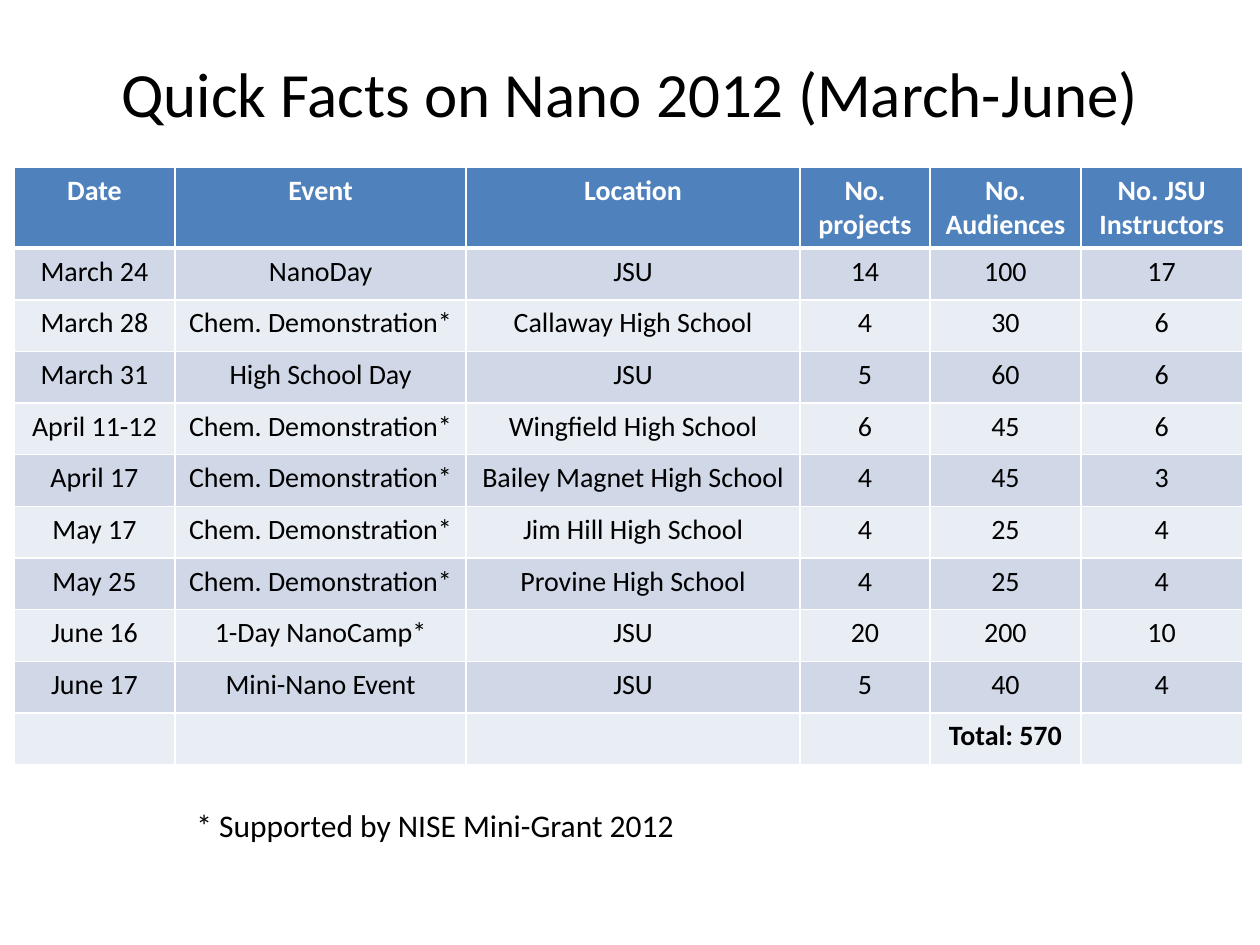
from lxml import etree
from pptx import Presentation
from pptx import util as u
from pptx.dml.color import RGBColor
from pptx.enum import text
from pptx.oxml.ns import qn

BLACK = RGBColor(0x00, 0x00, 0x00)
WHITE = RGBColor(0xFF, 0xFF, 0xFF)
HEADER_BLUE = RGBColor(0x4F, 0x81, 0xBD)
BAND_DARK = RGBColor(0xD0, 0xD8, 0xE8)
BAND_LIGHT = RGBColor(0xE9, 0xED, 0xF4)

COLUMN_WIDTHS = [1.28, 2.31, 2.65, 1.03, 1.2, 1.28]
HEADER_HEIGHT, ROW_HEIGHT = 0.64, 0.41
DEMO = "Chem. Demonstration*"
EVENTS = [
    ("Date", "Event", "Location", "No. projects", "No. Audiences", "No. JSU Instructors"),
    ("March 24", "NanoDay", "JSU", "14", "100", "17"),
    ("March 28", DEMO, "Callaway High School", "4", "30", "6"),
    ("March 31", "High School Day", "JSU", "5", "60", "6"),
    ("April 11-12", DEMO, "Wingfield High School", "6", "45", "6"),
    ("April 17", DEMO, "Bailey Magnet High School", "4", "45", "3"),
    ("May 17", DEMO, "Jim Hill High School", "4", "25", "4"),
    ("May 25", DEMO, "Provine High School", "4", "25", "4"),
    ("June 16", "1-Day NanoCamp*", "JSU", "20", "200", "10"),
    ("June 17", "Mini-Nano Event", "JSU", "5", "40", "4"),
    ("", "", "", "", "Total: 570", ""),
]


def style_paragraph(para, size, color=BLACK, bold=False, align=text.PP_ALIGN.CENTER):
    para.alignment = align
    para.font.name = "Calibri"
    para.font.size = u.Pt(size)
    para.font.bold = bold
    para.font.color.rgb = color


def add_text(page, words, left, top, width, height, size, align, wrap=True):
    box = page.shapes.add_textbox(*map(u.Inches, (left, top, width, height)))
    frame = box.text_frame
    frame.word_wrap = wrap
    frame.vertical_anchor = text.MSO_ANCHOR.MIDDLE
    frame.text = words
    style_paragraph(frame.paragraphs[0], size, align=align)


def set_borders(cell, top, bottom):
    """White cell borders, with widths in points."""
    properties = cell._tc.get_or_add_tcPr()
    for side, width in (("L", 1), ("R", 1), ("T", top), ("B", bottom)):
        line = etree.SubElement(properties, qn(f"a:ln{side}"), w=str(u.Pt(width)))
        fill = etree.SubElement(line, qn("a:solidFill"))
        etree.SubElement(fill, qn("a:srgbClr"), val=str(WHITE))


def add_events_table(page, left, top):
    height = HEADER_HEIGHT + ROW_HEIGHT * (len(EVENTS) - 1)
    table = page.shapes.add_table(
        len(EVENTS), len(COLUMN_WIDTHS), u.Inches(left), u.Inches(top),
        u.Inches(sum(COLUMN_WIDTHS)), u.Inches(height)).table
    for column, width in zip(table.columns, COLUMN_WIDTHS):
        column.width = u.Inches(width)

    for index, (row, values) in enumerate(zip(table.rows, EVENTS)):
        header = index == 0
        row.height = u.Inches(HEADER_HEIGHT if header else ROW_HEIGHT)
        band = BAND_DARK if index % 2 else BAND_LIGHT
        for cell, value in zip(row.cells, values):
            # A thick rule separates the header from the body
            set_borders(cell, top=3 if index == 1 else 1, bottom=3 if header else 1)
            cell.fill.solid()
            cell.fill.fore_color.rgb = HEADER_BLUE if header else band
            cell.text = value
            style_paragraph(cell.text_frame.paragraphs[0], 16,
                            WHITE if header else BLACK,
                            bold=header or value.startswith("Total"))


def main():
    deck = Presentation()
    deck.slide_width, deck.slide_height = u.Inches(10), u.Inches(7.5)
    page = deck.slides.add_slide(deck.slide_layouts[6])

    # Title
    add_text(page, "Quick Facts on Nano 2012 (March-June)",
             0.5, 0.3, 9, 0.87, 36, text.PP_ALIGN.CENTER)
    # Events
    add_events_table(page, 0.11, 1.33)
    # Footnote
    add_text(page, "* Supported by NISE Mini-Grant 2012",
             1.46, 6.35, 4.04, 0.4, 18, text.PP_ALIGN.LEFT, wrap=False)

    deck.save("out.pptx")


if __name__ == "__main__":
    main()
